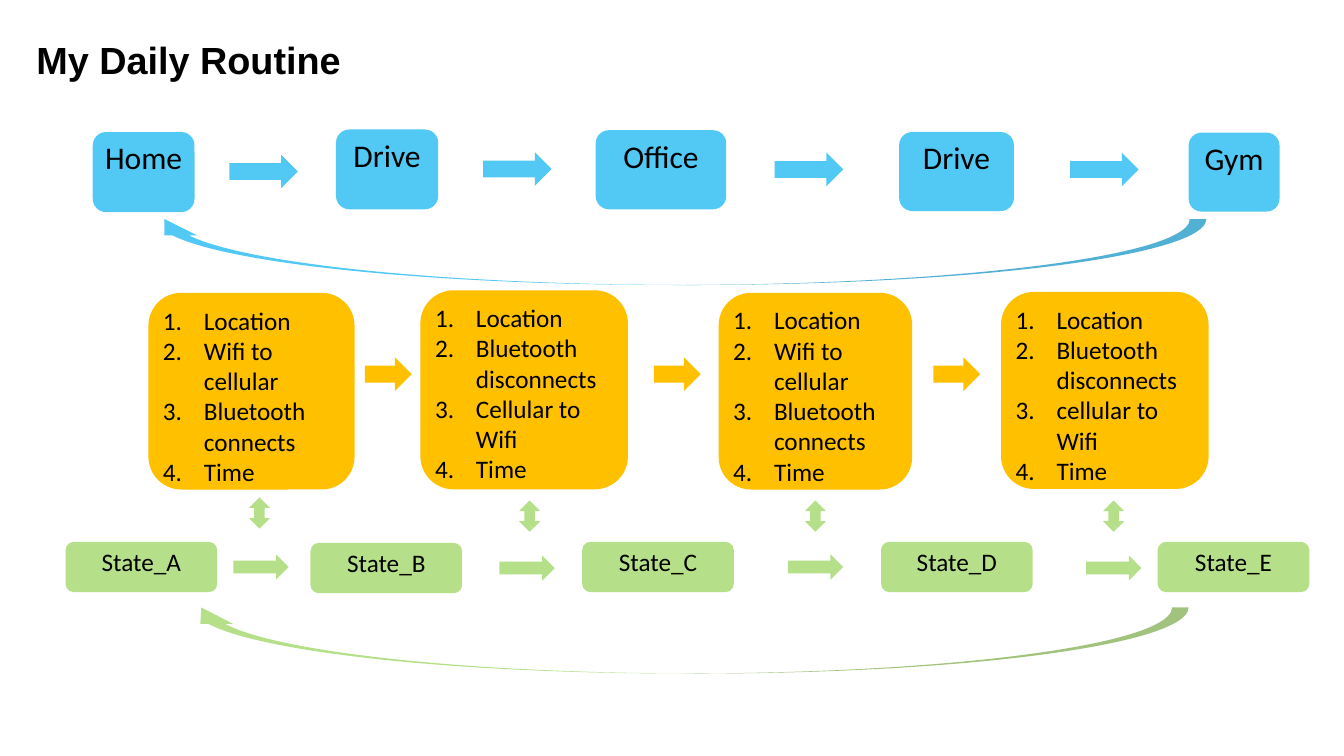
from lxml import etree
from pptx import Presentation
from pptx.dml.color import RGBColor
from pptx.enum.shapes import MSO_SHAPE
from pptx.enum.text import MSO_ANCHOR, PP_ALIGN
from pptx.oxml.ns import qn
from pptx.util import Pt

# Theme: colours as (hex, opacity in percent), fonts and type sizes
THEME = {
    "blue": ("00B0F0", 68), "gold": ("FFC000", 100), "green": ("92D050", 67),
    "ink": "000000", "head": "Arial", "body": "Calibri",
    "title": 54, "place": 45, "label": 36,
}
INDENT = 58.5

# Content: boxes are (text, left, top, width, height)
TITLE = "My Daily Routine"
PLACES = [
    ("Home", 132.5, 188.6, 145.4, 114.5),
    ("Drive", 480, 185, 146, 114),
    ("Office", 851, 186, 186.5, 113),
    ("Drive", 1284.5, 188.6, 164, 113),
    ("Gym", 1698, 189.4, 130, 113),
]
ARRIVE = ["Location", "Wifi to cellular", "Bluetooth connects", "Time"]
LEAVE = ["Location", "Bluetooth disconnects", "Cellular to Wifi", "Time"]
LAST = ["Location", "Bluetooth disconnects", "cellular to Wifi", "Time"]
CUES = [
    (ARRIVE, 212, 418.3, 294.5, 281),
    (LEAVE, 600.5, 414.7, 296.6, 284.4),
    (ARRIVE, 1026.7, 418.3, 276.5, 281),
    (LAST, 1430, 417, 296.6, 281.5),
]
STATES = [
    (f"State_{key}", left, top, 216.7, 72)
    for key, left, top in [("A", 93.6, 774), ("B", 443.5, 775.5),
                           ("C", 831.6, 774), ("D", 1258.6, 774),
                           ("E", 1653.8, 774)]
]

# Arrows: (kind, colour, width, height, turn, [(left, top), ...])
ARROWS = [
    (MSO_SHAPE.RIGHT_ARROW, "blue", 98, 48, 0,
     [(327.6, 221), (690, 217.5), (1106.6, 218), (1528.6, 218)]),
    (MSO_SHAPE.RIGHT_ARROW, "gold", 67, 48, 0,
     [(521.3, 510.5), (934, 510.5), (1333.4, 510.5)]),
    (MSO_SHAPE.RIGHT_ARROW, "green", 79, 36, 0,
     [(333.4, 792), (713.5, 793.5), (1125.4, 792), (1551.6, 793.5)]),
    (MSO_SHAPE.UP_DOWN_ARROW, "green", 30, 44.6, 0,
     [(355.7, 710.6), (741.6, 715), (1149.8, 715), (1576, 715)]),
    (MSO_SHAPE.CURVED_LEFT_ARROW, "blue", 94.3, 1512, 90, [(920.2, -396)]),
    (MSO_SHAPE.CURVED_LEFT_ARROW, "green", 94.3, 1434, 90, [(933.8, 198)]),
]


def style(para, font, size, bold=False):
    for run in para.runs:
        run.font.name = font
        run.font.size = Pt(size)
        run.font.bold = bold
        run.font.color.rgb = RGBColor.from_string(THEME["ink"])


def add_part(slide, kind, tint, left, top, width, height):
    part = slide.shapes.add_shape(kind, Pt(left), Pt(top), Pt(width), Pt(height))
    code, clear = THEME[tint]
    part.shadow.inherit = False
    part.line.fill.background()
    part.fill.solid()
    part.fill.fore_color.rgb = RGBColor.from_string(code)
    if clear < 100:
        hue = part.fill._xPr.find(".//" + qn("a:srgbClr"))
        etree.SubElement(hue, qn("a:alpha"), val=str(clear * 1000))
    return part


def number(para):
    props = para._p.get_or_add_pPr()
    props.set("marL", str(Pt(INDENT)))
    props.set("indent", str(-Pt(INDENT)))
    etree.SubElement(props, qn("a:buFont"), typeface="+mj-lt")
    etree.SubElement(props, qn("a:buAutoNum"), type="arabicPeriod")


def add_box(slide, tint, size, text, *place):
    frame = add_part(slide, MSO_SHAPE.ROUNDED_RECTANGLE, tint, *place).text_frame
    frame.word_wrap = True
    frame.vertical_anchor = MSO_ANCHOR.TOP
    listed = isinstance(text, list)
    frame.text = "\n".join(text) if listed else text
    for para in frame.paragraphs:
        para.alignment = PP_ALIGN.LEFT if listed else PP_ALIGN.CENTER
        if listed:
            number(para)
        style(para, THEME["body"], size)


def add_title(slide):
    title = slide.shapes.title
    title.left, title.top = Pt(49), Pt(18.7)
    title.width, title.height = Pt(1821.6), Pt(131)
    frame = title.text_frame
    frame.text = TITLE
    frame.vertical_anchor = MSO_ANCHOR.MIDDLE
    frame.margin_left = frame.margin_right = Pt(3)
    frame.margin_top = frame.margin_bottom = Pt(3)
    para = frame.paragraphs[0]
    para.alignment = PP_ALIGN.LEFT
    style(para, THEME["head"], THEME["title"], True)


def main():
    deck = Presentation()
    deck.slide_width, deck.slide_height = Pt(1920), Pt(1080)
    slide = deck.slides.add_slide(deck.slide_layouts[5])
    add_title(slide)

    # Rows of places, cues and states
    for tint, size, row in [("blue", THEME["place"], PLACES),
                            ("gold", THEME["label"], CUES),
                            ("green", THEME["label"], STATES)]:
        for box in row:
            add_box(slide, tint, size, *box)

    # Arrows within and between the rows
    for kind, tint, width, height, turn, spots in ARROWS:
        for left, top in spots:
            part = add_part(slide, kind, tint, left, top, width, height)
            part.rotation = turn

    deck.save("out.pptx")


if __name__ == "__main__":
    main()
